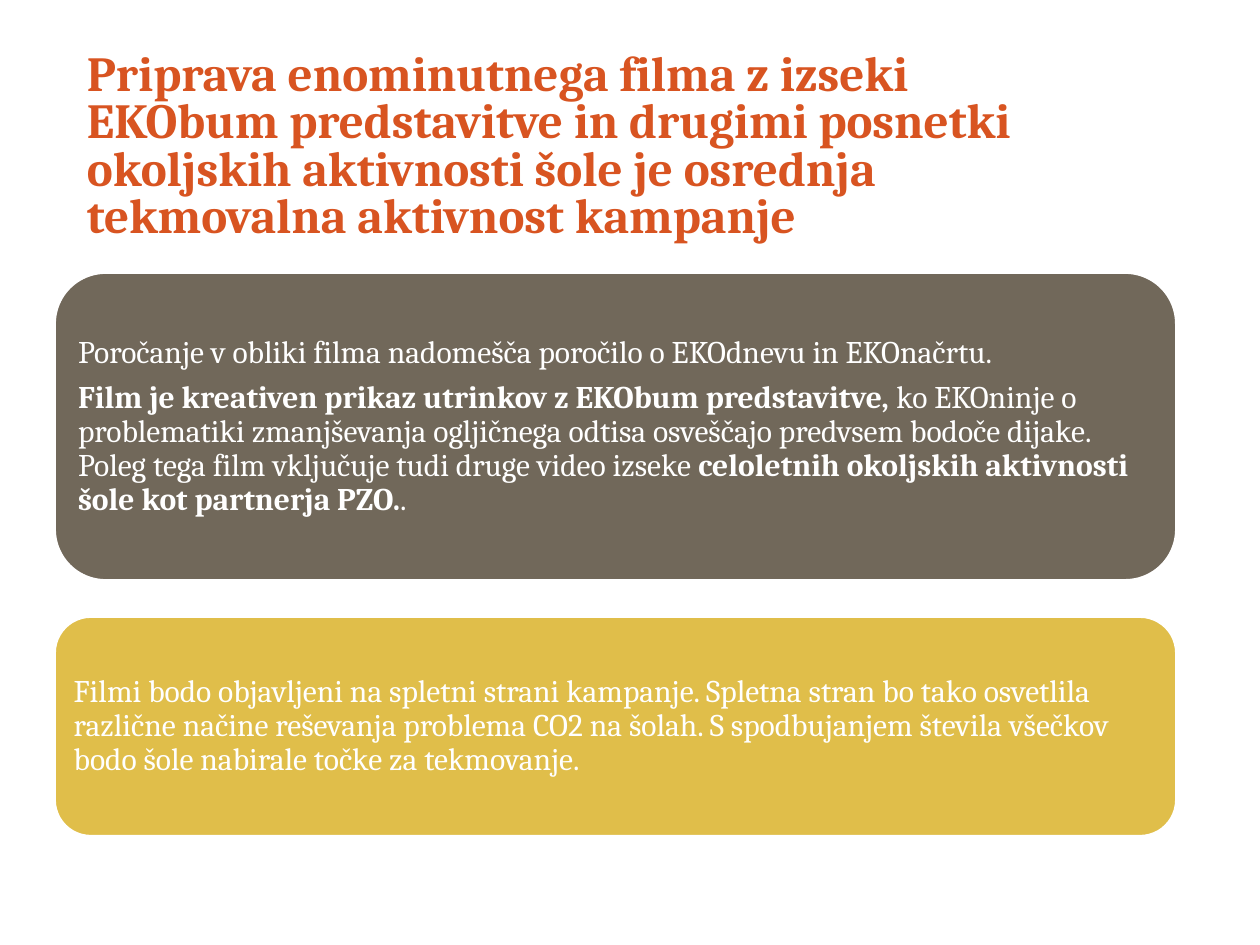
from pptx import Presentation
from pptx.dml.color import RGBColor
from pptx.enum.shapes import MSO_SHAPE
from pptx.enum.text import MSO_ANCHOR, MSO_AUTO_SIZE, PP_ALIGN
from pptx.util import Inches, Pt

ROUNDED = MSO_SHAPE.ROUNDED_RECTANGLE
TOP, MIDDLE = MSO_ANCHOR.TOP, MSO_ANCHOR.MIDDLE
LEFT = PP_ALIGN.LEFT
NO_FIT = MSO_AUTO_SIZE.NONE

FONT = "Cambria"
COLORS = {"title": "D85421", "report": "71685A", "publish": "E0BE4A", "white": "FFFFFF"}
CARD_LEFT, CARD_WIDTH = 0.43, 8.91
INSET = Inches(0.07)

TITLE = ("Priprava enominutnega filma z izseki EKObum predstavitve in drugimi posnetki "
         "okoljskih aktivnosti šole je osrednja tekmovalna aktivnost kampanje")

# Each card: colour, top, height, paragraphs of (text, bold) runs
CARDS = [
    ("report", 2.16, 2.45, [
        [("Poročanje v obliki filma nadomešča poročilo o EKOdnevu in EKOnačrtu.", False)],
        [("Film je kreativen prikaz utrinkov z EKObum predstavitve, ", True),
         ("ko EKOninje o problematiki zmanjševanja ogljičnega odtisa osveščajo predvsem "
          "bodoče dijake. Poleg tega film vključuje tudi druge video izseke ", False),
         ("celoletnih okoljskih aktivnosti šole kot partnerja PZO.", True),
         (".", False)],
    ]),
    ("publish", 4.89, 1.75, [
        [("Filmi bodo objavljeni na spletni strani kampanje. Spletna stran bo tako osvetlila "
          "različne načine reševanja problema CO2 na šolah. S spodbujanjem števila všečkov "
          "bodo šole nabirale točke za tekmovanje.", False)],
    ]),
]


def style(r, size, color, bold):
    r.font.name = FONT
    r.font.size = Pt(size)
    r.font.bold = bold
    r.font.color.rgb = RGBColor.from_string(COLORS[color])


prs = Presentation()
prs.slide_width, prs.slide_height = Inches(10), Inches(7.5)
s = prs.slides.add_slide(prs.slide_layouts[5])

title = s.shapes.title
title.left, title.top = Inches(0.59), Inches(0.24)
title.width, title.height = Inches(7.83), Inches(1.51)
tf = title.text_frame
tf.text = TITLE
tf.word_wrap = True
tf.auto_size = NO_FIT
tf.vertical_anchor = TOP
tf.margin_top = Inches(0.19)
p = tf.paragraphs[0]
p.alignment = LEFT
p.line_spacing = 0.8
style(p.runs[0], 28, "title", True)

for color, top, height, paragraphs in CARDS:
    sp = s.shapes.add_shape(ROUNDED, Inches(CARD_LEFT), Inches(top),
                            Inches(CARD_WIDTH), Inches(height))
    sp.shadow.inherit = False
    sp.fill.solid()
    sp.fill.fore_color.rgb = RGBColor.from_string(COLORS[color])
    sp.line.color.rgb = RGBColor.from_string(COLORS["white"])
    sp.line.width = Pt(2)
    tf = sp.text_frame
    tf.word_wrap = True
    tf.vertical_anchor = MIDDLE
    tf.margin_left = tf.margin_right = tf.margin_top = tf.margin_bottom = INSET
    for i, runs in enumerate(paragraphs):
        p = tf.add_paragraph() if i else tf.paragraphs[0]
        p.alignment = LEFT
        p.line_spacing = 0.9
        p.space_after = Pt(6.3)
        for text, bold in runs:
            r = p.add_run()
            r.text = text
            style(r, 18, "white", bold)

prs.save("out.pptx")
